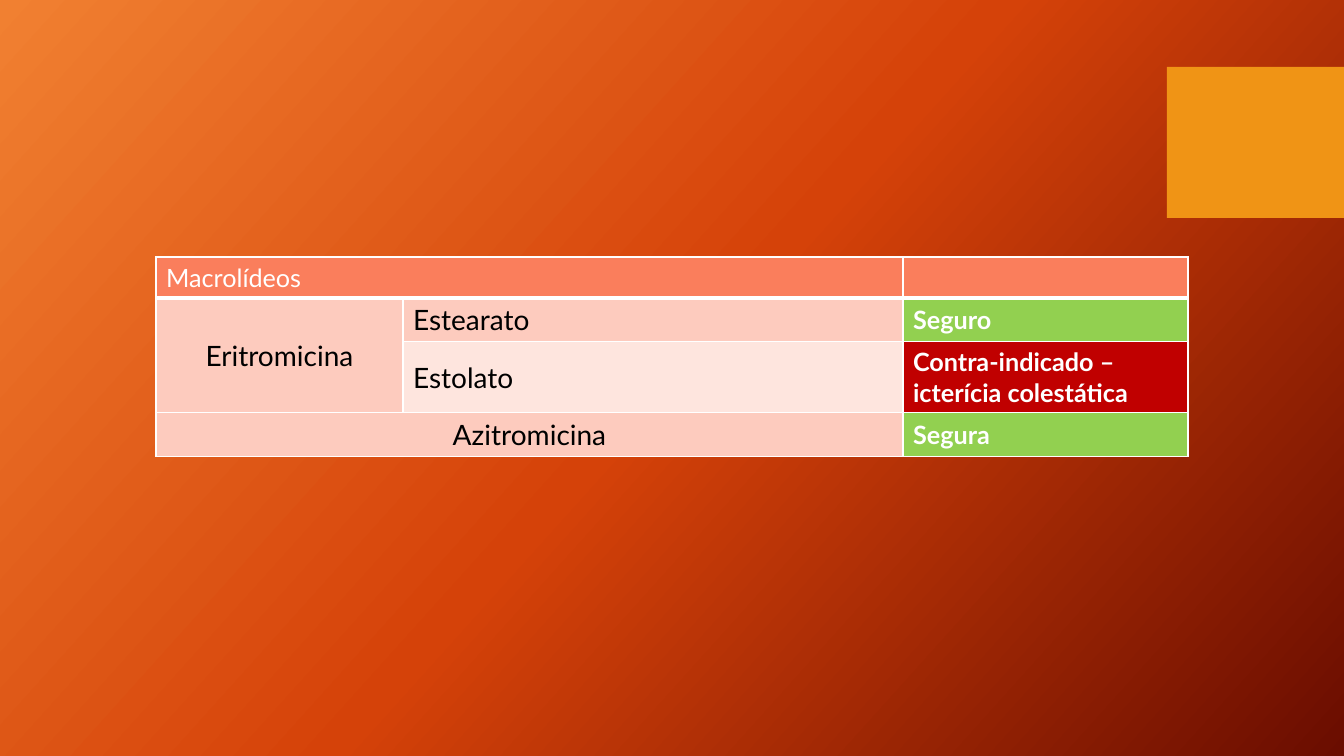
from copy import deepcopy

from lxml.etree import SubElement
from pptx import Presentation
from pptx.dml.color import RGBColor
from pptx.enum.shapes import MSO_SHAPE
from pptx.enum.text import MSO_ANCHOR, PP_ALIGN
from pptx.oxml.ns import qn
from pptx.util import Emu, Inches, Pt

PIXELS_PER_INCH = 100.8
WHITE = RGBColor(0xFF, 0xFF, 0xFF)
BLACK = RGBColor(0x00, 0x00, 0x00)
AMBER = RGBColor(0xF0, 0x94, 0x15)
CORAL = RGBColor(0xFA, 0x7E, 0x5C)
PINK = RGBColor(0xFD, 0xCB, 0xBE)
PALE_PINK = RGBColor(0xFE, 0xE5, 0xDE)
GREEN = RGBColor(0x92, 0xD0, 0x50)
RED = RGBColor(0xC0, 0x00, 0x00)
BACKGROUND_STOPS = [
    (0, RGBColor(0xF1, 0x80, 0x31)),
    (0.5, RGBColor(0xD5, 0x42, 0x09)),
    (1, RGBColor(0x6A, 0x0D, 0x00)),
]

HEADER = {"size": 18, "color": WHITE}
DRUG = {"size": 20, "color": BLACK}
CENTERED_DRUG = {**DRUG, "align": PP_ALIGN.CENTER}
VERDICT = {"size": 18, "color": WHITE, "bold": True}


def px(length):
    return Emu(round(length * Inches(1) / PIXELS_PER_INCH))


def write_text(text_frame, text, size, color, bold=False, align=PP_ALIGN.LEFT):
    paragraph = text_frame.paragraphs[0]
    paragraph.alignment = align
    run = paragraph.add_run()
    run.text = text
    run.font.name = SlideBuilder.font_name
    run.font.size = Pt(size)
    run.font.bold = bold
    run.font.color.rgb = color


class SlideBuilder:
    font_name = "Lato"
    border_color = WHITE

    def __init__(self, presentation):
        self.slide = presentation.slides.add_slide(presentation.slide_layouts[6])

    def gradient_background(self, stops, angle):
        fill = self.slide.background.fill
        fill.gradient()
        fill.gradient_angle = angle
        stop_list = self.slide.element.find(".//" + qn("a:gsLst"))
        stop_list.insert(1, deepcopy(stop_list[0]))
        for stop, (position, color) in zip(fill.gradient_stops, stops):
            stop.position = position
            stop.color.rgb = color

    def rectangle(self, left, top, width, height, color):
        shape = self.slide.shapes.add_shape(
            MSO_SHAPE.RECTANGLE, px(left), px(top), px(width), px(height))
        shape.shadow.inherit = False
        shape.fill.solid()
        shape.fill.fore_color.rgb = color
        shape.line.fill.background()

    def table(self, left, top, column_widths, row_heights):
        table = self.slide.shapes.add_table(
            len(row_heights), len(column_widths), px(left), px(top),
            px(sum(column_widths)), px(sum(row_heights))).table
        for column, width in zip(table.columns, column_widths):
            column.width = px(width)
        for row, height in zip(table.rows, row_heights):
            row.height = px(height)
        return table

    def cell(self, cell, fill_color, bottom_width=1):
        properties = cell._tc.get_or_add_tcPr()
        for side, width in (("L", 1), ("R", 1), ("T", 1), ("B", bottom_width)):
            line = SubElement(properties, qn(f"a:ln{side}"), w=str(Pt(width)))
            solid = SubElement(line, qn("a:solidFill"))
            SubElement(solid, qn("a:srgbClr"), val=str(self.border_color))
        cell.fill.solid()
        cell.fill.fore_color.rgb = fill_color
        cell.vertical_anchor = MSO_ANCHOR.MIDDLE


def main():
    presentation = Presentation()
    presentation.slide_width = px(1344)
    presentation.slide_height = px(756)

    builder = SlideBuilder(presentation)
    builder.gradient_background(BACKGROUND_STOPS, angle=318)
    builder.rectangle(1167, 67, 177, 151, AMBER)

    table = builder.table(156, 257, [247, 500, 285], [40, 44, 70, 44])
    row_fills = [
        (CORAL, CORAL, CORAL),
        (PINK, PINK, GREEN),
        (PINK, PALE_PINK, RED),
        (PINK, PINK, GREEN),
    ]
    for row, fills in enumerate(row_fills):
        for column, color in enumerate(fills):
            builder.cell(table.cell(row, column), color,
                         bottom_width=3 if row == 0 else 1)

    for first, last in [((0, 0), (0, 1)), ((1, 0), (2, 0)), ((3, 0), (3, 1))]:
        table.cell(*first).merge(table.cell(*last))

    entries = [
        (0, 0, "Macrolídeos", HEADER),
        (1, 0, "Eritromicina", CENTERED_DRUG),
        (1, 1, "Estearato", DRUG),
        (1, 2, "Seguro", VERDICT),
        (2, 1, "Estolato", DRUG),
        (2, 2, "Contra-indicado – icterícia colestática", VERDICT),
        (3, 0, "Azitromicina", CENTERED_DRUG),
        (3, 2, "Segura", VERDICT),
    ]
    for row, column, text, style in entries:
        write_text(table.cell(row, column).text_frame, text, **style)

    presentation.save("out.pptx")


if __name__ == "__main__":
    main()
